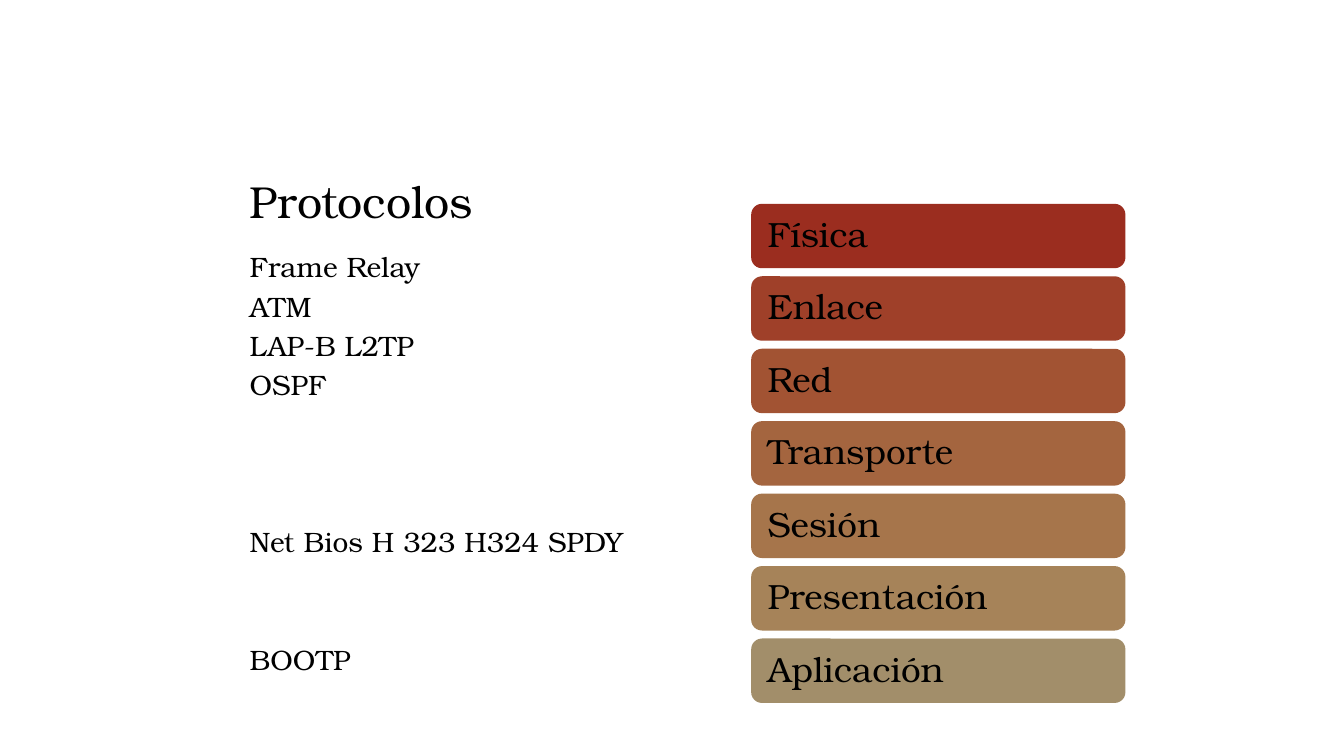
import pptx
import pptx.dml.color
import pptx.enum.shapes
import pptx.enum.text
import pptx.util

Pt = pptx.util.Pt


def color(hex_code):
    return pptx.dml.color.RGBColor.from_string(hex_code)


class Painter:
    font = "TeX Gyre Bonum"
    ink = "000000"

    def __init__(self, page):
        self.page = page

    def add_span(self, para, text, size):
        span = para.add_run()
        span.text = text
        span.font.name = self.font
        span.font.size = Pt(size)
        span.font.color.rgb = color(self.ink)

    def bar(self, left, top, width, height, fill, text, size):
        box = self.page.shapes.add_shape(
            pptx.enum.shapes.MSO_SHAPE.ROUNDED_RECTANGLE,
            Pt(left), Pt(top), Pt(width), Pt(height))
        box.shadow.inherit = False
        box.fill.solid()
        box.fill.fore_color.rgb = color(fill)
        box.line.fill.background()
        frame = box.text_frame
        frame.word_wrap = True
        frame.vertical_anchor = pptx.enum.text.MSO_ANCHOR.MIDDLE
        frame.margin_left = frame.margin_right = Pt(9.5)
        frame.margin_top = frame.margin_bottom = Pt(7)
        para = frame.paragraphs[0]
        para.alignment = pptx.enum.text.PP_ALIGN.LEFT
        para.line_spacing = 0.9
        self.add_span(para, text, size)

    def column(self, left, top, width, height, heading, items):
        box = self.page.shapes.add_textbox(Pt(left), Pt(top), Pt(width), Pt(height))
        frame = box.text_frame
        frame.word_wrap = True
        lines = [(heading, 32, 0, 12)]
        lines += [(text, 20, before, 0) for text, before in items]
        for index, (text, size, before, after) in enumerate(lines):
            para = frame.add_paragraph() if index else frame.paragraphs[0]
            properties = para._p.get_or_add_pPr()
            properties.set("marL", str(Pt(28.8)))
            properties.set("indent", str(Pt(-20.2)))
            para.space_before = Pt(before)
            para.space_after = Pt(after)
            self.add_span(para, text, size)


def main():
    deck = pptx.Presentation()
    deck.slide_width, deck.slide_height = Pt(960), Pt(540)
    painter = Painter(deck.slides.add_slide(deck.slide_layouts[6]))

    # Layers of the model, top to bottom
    layers = [
        ("Física", "9B2D1F"),
        ("Enlace", "9F4029"),
        ("Red", "A25333"),
        ("Transporte", "A4653F"),
        ("Sesión", "A6754B"),
        ("Presentación", "A68359"),
        ("Aplicación", "A28E6A"),
    ]
    for row, (name, fill) in enumerate(layers):
        painter.bar(536.6, 145.6 + row * 51.75, 267.3, 46, fill, name, 25)

    # Protocols, with wider gaps before those of the upper layers
    gap, line = 4, 28.1
    protocols = [
        ("Frame Relay", gap),
        ("ATM", gap),
        ("LAP-B L2TP", gap),
        ("OSPF", gap),
        ("Net Bios H 323 H324 SPDY", gap + 3 * line),
        ("BOOTP", gap + 2 * line),
    ]
    painter.column(162.7, 120.6, 347.8, 386.3, "Protocolos", protocols)

    deck.save("out.pptx")


if __name__ == "__main__":
    main()
